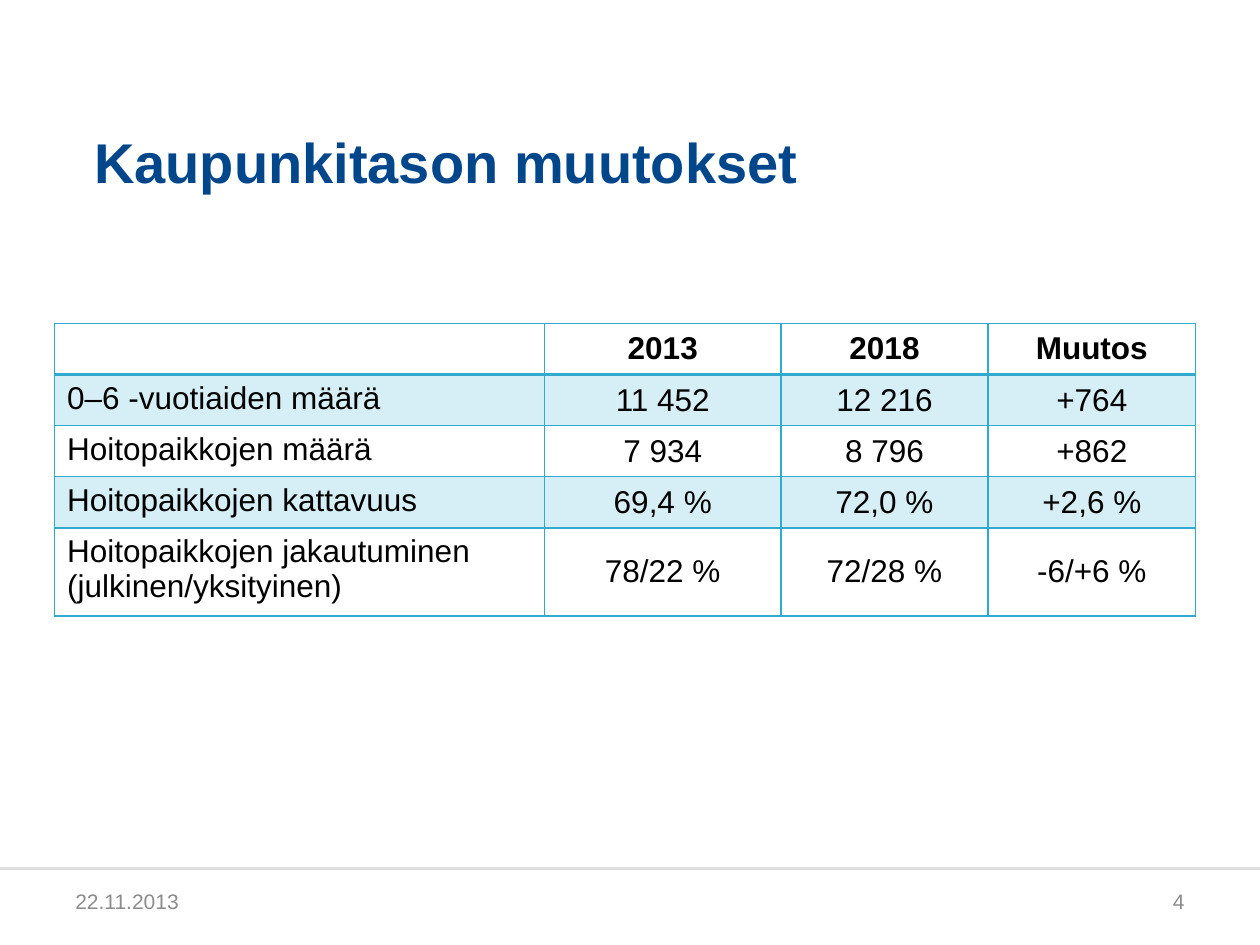
"""Builds the slide on city-level changes in day-care places."""
import dataclasses

import lxml.etree
import pptx
import pptx.dml.color
import pptx.enum.shapes
import pptx.enum.text
import pptx.oxml.ns
import pptx.util

Cm = pptx.util.Cm
Pt = pptx.util.Pt
Align = pptx.enum.text.PP_ALIGN
Anchor = pptx.enum.text.MSO_ANCHOR
qn = pptx.oxml.ns.qn


@dataclasses.dataclass(frozen=True)
class Theme:
    font: str = "Arial"
    title: str = "00468B"
    text: str = "000000"
    muted: str = "8C8C8C"
    rule: str = "DFDFDF"
    paper: str = "FFFFFF"
    border: str = "32AACD"
    band: str = "D6EEF5"
    title_size: int = 32
    table_size: int = 18
    footer_size: int = 12


def rgb(color):
    return pptx.dml.color.RGBColor.from_string(color)


class SlideBuilder:
    def __init__(self, slide, theme):
        self.slide = slide
        self.theme = theme

    def fill_text(self, frame, text, size, color, bold=False, align=Align.LEFT):
        para = frame.paragraphs[0]
        para.text = text
        para.alignment = align
        para.font.name = self.theme.font
        para.font.size = Pt(size)
        para.font.bold = bold
        para.font.color.rgb = rgb(color)

    def text(self, left, top, width, height, text, size, color,
             bold=False, align=Align.LEFT, anchor=Anchor.MIDDLE, inset=None):
        box = self.slide.shapes.add_textbox(Cm(left), Cm(top), Cm(width), Cm(height))
        frame = box.text_frame
        frame.word_wrap = True
        frame.vertical_anchor = anchor
        if inset is not None:
            frame.margin_left = frame.margin_right = Cm(inset)
            frame.margin_top = frame.margin_bottom = Cm(inset)
        self.fill_text(frame, text, size, color, bold, align)

    def panel(self, left, top, width, height, color):
        panel = self.slide.shapes.add_shape(
            pptx.enum.shapes.MSO_SHAPE.RECTANGLE, Cm(left), Cm(top), Cm(width), Cm(height))
        panel.shadow.inherit = False
        panel.fill.solid()
        panel.fill.fore_color.rgb = rgb(color)
        panel.line.fill.background()

    def rule(self, left, top, width, color, weight):
        rule = self.slide.shapes.add_connector(
            pptx.enum.shapes.MSO_CONNECTOR.STRAIGHT,
            Cm(left), Cm(top), Cm(left + width), Cm(top))
        rule.line.color.rgb = rgb(color)
        rule.line.width = Pt(weight)
        lxml.etree.SubElement(rule._element.spPr, qn("a:effectLst"))

    def border(self, cell, side, weight):
        properties = cell._tc.get_or_add_tcPr()
        line = lxml.etree.SubElement(properties, qn(f"a:ln{side}"), w=str(Pt(weight)))
        fill = lxml.etree.SubElement(line, qn("a:solidFill"))
        lxml.etree.SubElement(fill, qn("a:srgbClr"), val=self.theme.border)

    def table(self, left, top, widths, heights, rows):
        table = self.slide.shapes.add_table(
            len(rows), len(widths), Cm(left), Cm(top),
            Cm(sum(widths)), Cm(sum(heights))).table
        for column, width in zip(table.columns, widths):
            column.width = Cm(width)
        for row, height in zip(table.rows, heights):
            row.height = Cm(height)
        for row_index, row in enumerate(rows):
            for column_index, text in enumerate(row):
                self.cell(table.cell(row_index, column_index), text, row_index, column_index)

    def cell(self, cell, text, row_index, column_index):
        is_header = row_index == 0
        is_label = column_index == 0
        weights = {"L": 1, "R": 1, "T": 2 if row_index == 1 else 1, "B": 2 if is_header else 1}
        for side, weight in weights.items():
            self.border(cell, side, weight)
        if row_index % 2:
            cell.fill.solid()
            cell.fill.fore_color.rgb = rgb(self.theme.band)
        else:
            cell.fill.background()
        cell.vertical_anchor = Anchor.TOP if is_label else Anchor.MIDDLE
        self.fill_text(cell.text_frame, text, self.theme.table_size, self.theme.text,
                       is_header, Align.LEFT if is_label else Align.CENTER)


def main():
    theme = Theme()
    deck = pptx.Presentation()
    deck.slide_width, deck.slide_height = Cm(25.4), Cm(19.05)
    builder = SlideBuilder(deck.slides.add_slide(deck.slide_layouts[6]), theme)

    builder.panel(0, 17.53, 25.4, 1.52, theme.paper)
    builder.rule(0, 17.5, 25.4, theme.rule, 1.75)
    builder.text(1.27, 17.66, 5.93, 1.01, "22.11.2013", theme.footer_size, theme.muted)
    builder.text(18.2, 17.66, 5.93, 1.01, "4", theme.footer_size, theme.muted,
                 align=Align.RIGHT)
    builder.text(1.9, 1.73, 21.6, 2.2, "Kaupunkitason muutokset", theme.title_size,
                 theme.title, bold=True, anchor=Anchor.BOTTOM, inset=0)
    builder.table(1.1, 6.52, [9.88, 4.76, 4.18, 4.18], [1.03] * 4 + [1.68], [
        ["", "2013", "2018", "Muutos"],
        ["0–6 -vuotiaiden määrä", "11 452", "12 216", "+764"],
        ["Hoitopaikkojen määrä", "7 934", "8 796", "+862"],
        ["Hoitopaikkojen kattavuus", "69,4 %", "72,0 %", "+2,6 %"],
        ["Hoitopaikkojen jakautuminen (julkinen/yksityinen)",
         "78/22 %", "72/28 %", "-6/+6 %"],
    ])
    deck.save("out.pptx")


if __name__ == "__main__":
    main()
